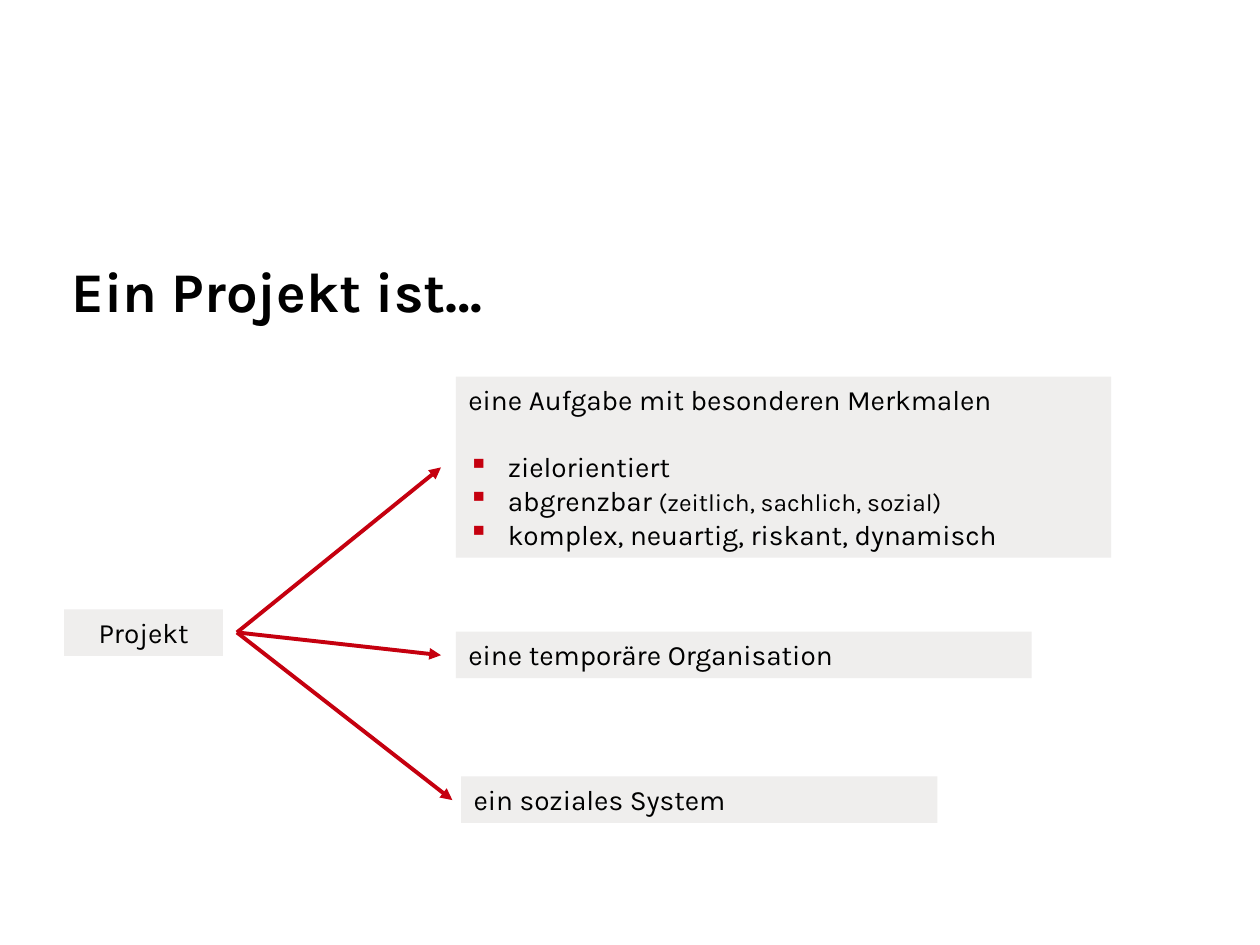
from dataclasses import dataclass

from lxml import etree
from pptx import Presentation
from pptx.dml.color import RGBColor
from pptx.enum.shapes import MSO_CONNECTOR, MSO_SHAPE
from pptx.enum.text import MSO_ANCHOR, PP_ALIGN
from pptx.oxml.ns import qn
from pptx.util import Pt

RECTANGLE = MSO_SHAPE.RECTANGLE
STRAIGHT = MSO_CONNECTOR.STRAIGHT
TOP = MSO_ANCHOR.TOP
LEFT, CENTER = PP_ALIGN.LEFT, PP_ALIGN.CENTER


@dataclass(frozen=True)
class Theme:
    font: str = "Karla"
    text: RGBColor = RGBColor(0x00, 0x00, 0x00)
    panel: RGBColor = RGBColor(0xEF, 0xEE, 0xED)
    accent: RGBColor = RGBColor(0xC5, 0x00, 0x0F)
    title: int = 32
    body: int = 16
    detail: int = 14


theme = Theme()


def style(para, size, bold=False):
    para.font.name = theme.font
    para.font.size = Pt(size)
    para.font.bold = bold
    para.font.color.rgb = theme.text


def add_panel(left, top, width, height, text, align=LEFT):
    """Add a grey box with one line of text and return its text frame."""
    panel = page.shapes.add_shape(RECTANGLE, Pt(left), Pt(top), Pt(width), Pt(height))
    panel.shadow.inherit = False
    panel.fill.solid()
    panel.fill.fore_color.rgb = theme.panel
    panel.line.fill.background()
    frame = panel.text_frame
    frame.word_wrap = True
    frame.vertical_anchor = TOP
    para = frame.paragraphs[0]
    para.text = text
    para.alignment = align
    style(para, theme.body)
    return frame


deck = Presentation()
deck.slide_width, deck.slide_height = Pt(720), Pt(540)
page = deck.slides.add_slide(deck.slide_layouts[6])

# Panels
line_height = 26.6
add_panel(36.7, 348.3, 90.7, line_height, "Projekt", CENTER)
task_frame = add_panel(260.6, 215.2, 374.4, 103.5, "eine Aufgabe mit besonderen Merkmalen")
add_panel(260.6, 361, 329, line_height, "eine temporäre Organisation")
add_panel(263.5, 443.7, 272.2, line_height, "ein soziales System")

# Features of the task
features = [
    ("zielorientiert", ""),
    ("abgrenzbar ", "(zeitlich, sachlich, sozial)"),
    ("komplex, neuartig, riskant, dynamisch", ""),
]
for index, (feature, detail) in enumerate(features):
    para = task_frame.add_paragraph()
    para.alignment = LEFT
    if index == 0:
        para.space_before = Pt(19.2)
    properties = para._p.get_or_add_pPr()
    properties.set("marL", str(Pt(22.5)))
    properties.set("indent", str(-Pt(22.5)))
    bullet_color = etree.SubElement(properties, qn("a:buClr"))
    etree.SubElement(bullet_color, qn("a:srgbClr"), val=str(theme.accent))
    etree.SubElement(properties, qn("a:buChar"), char="▪")
    para.add_run().text = feature
    if detail:
        span = para.add_run()
        span.text = detail
        span.font.size = Pt(theme.detail)
    style(para, theme.body)

# Arrows fanning out from the project
fork_x, fork_y = 135.4, 361.4
for tip_x, tip_y in [(252, 267.1), (252, 374.4), (258.5, 457.2)]:
    arrow = page.shapes.add_connector(STRAIGHT, Pt(fork_x), Pt(fork_y), Pt(tip_x), Pt(tip_y))
    arrow.line.color.rgb = theme.accent
    arrow.line.width = Pt(2.25)
    etree.SubElement(arrow.line._get_or_add_ln(), qn("a:tailEnd"), type="triangle")
    etree.SubElement(arrow._element.spPr, qn("a:effectLst"))

# Title
title_box = page.shapes.add_textbox(Pt(33.8), Pt(141.8), Pt(663.1), Pt(76.3))
title_frame = title_box.text_frame
title_frame.word_wrap = True
title_frame.margin_top = Pt(5)
title = title_frame.paragraphs[0]
title.text = "Ein Projekt ist…"
style(title, theme.title, bold=True)

deck.save("out.pptx")
